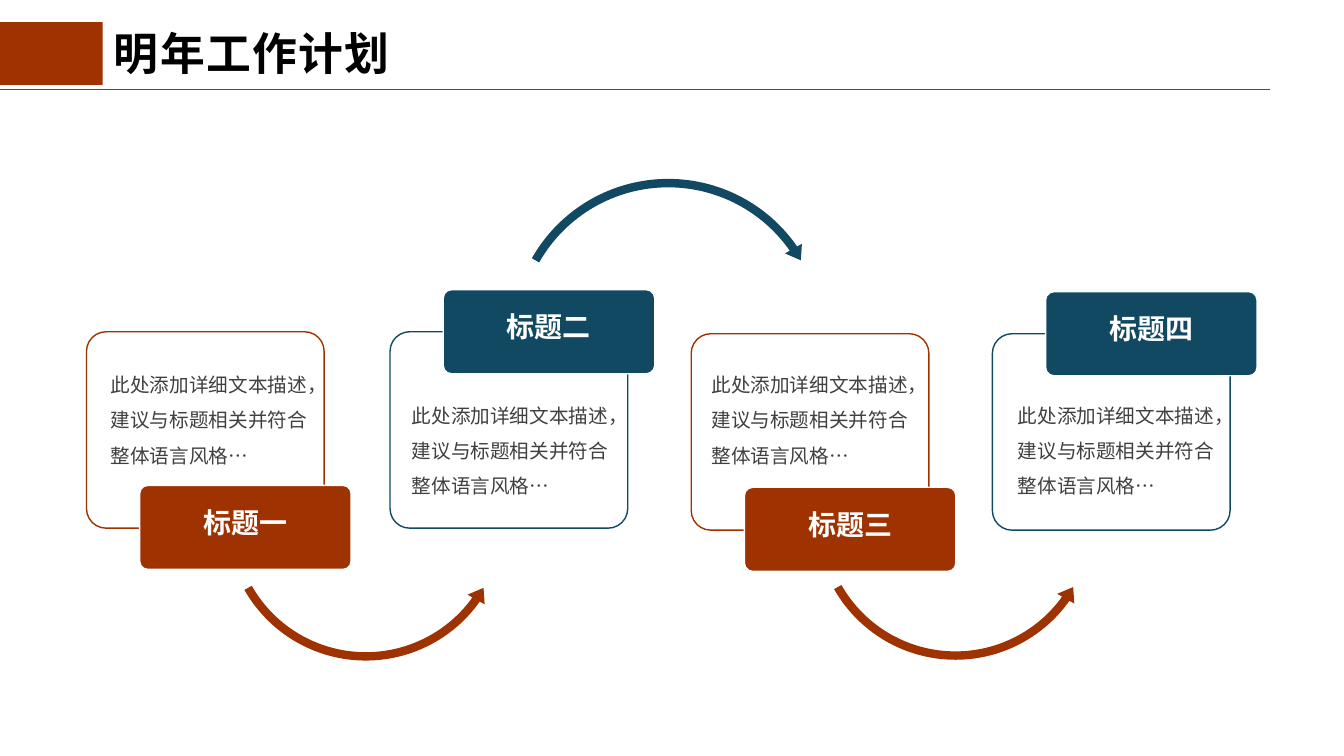
from dataclasses import dataclass

from lxml.etree import SubElement
from pptx import Presentation
from pptx.dml.color import RGBColor
from pptx.enum.lang import MSO_LANGUAGE_ID as Language
from pptx.enum.shapes import MSO_CONNECTOR as Connector
from pptx.enum.shapes import MSO_SHAPE as Shape
from pptx.enum.text import MSO_ANCHOR as Anchor
from pptx.enum.text import MSO_AUTO_SIZE as AutoSize
from pptx.enum.text import PP_ALIGN as Align
from pptx.oxml.ns import qn
from pptx.util import Cm, Pt

RUST, TEAL, WHITE, BLACK, GREY = "9F3201", "104961", "FFFFFF", "000000", "404040"
FONT = "Arial"
DETAIL = "此处添加详细文本描述，建议与标题相关并符合整体语言风格…"

CARD_SIZE = (5.99, 4.95)
PLATE_SIZE = (5.33, 2.12)
DETAIL_SIZE = (5.72, 2.84)
PLATE_SHIFT = 1.34
PLATE_ABOVE, PLATE_BELOW = -1.06, 3.87
DETAIL_HIGH, DETAIL_LOW = 8.97, 9.75


@dataclass
class Step:
    heading: str
    left: float
    top: float
    detail_left: float
    plate_on_top: bool

    @property
    def color(self) -> str:
        return TEAL if self.plate_on_top else RUST


@dataclass
class Arc:
    kind: Shape
    left: float
    top: float
    size: float
    color: str
    adjustments: tuple


UNDER_ARC = (0.029, 3.512, 21.267, 90.245, 0.034)
OVER_ARC = (0.026, 3.115, 195.129, 125.755, 0.03)

STEPS = [
    Step("标题一", 2.18, 8.36, 2.54, False),
    Step("标题二", 9.83, 8.36, 10.13, True),
    Step("标题三", 17.42, 8.41, 17.68, False),
    Step("标题四", 25.01, 8.41, 25.4, True),
]
ARCS = [
    Arc(Shape.LEFT_CIRCULAR_ARROW, 5.56, 9.47, 7.32, RUST, UNDER_ARC),
    Arc(Shape.CIRCULAR_ARROW, 12.75, 4.37, 8.18, TEAL, OVER_ARC),
    Arc(Shape.LEFT_CIRCULAR_ARROW, 20.42, 9.45, 7.32, RUST, UNDER_ARC),
]


def rgb(color: str) -> RGBColor:
    return RGBColor.from_string(color)


def write(box, text: str, *, size: float, color: str, bold: bool = False,
          align=Align.LEFT, anchor=Anchor.TOP, line_spacing: float = 1.0,
          tracking: float = 0, bottom: float = 0.13) -> None:
    frame = box.text_frame
    frame.word_wrap = True
    frame.auto_size = AutoSize.NONE
    frame.vertical_anchor = anchor
    frame.margin_left = frame.margin_right = Cm(0.25)
    frame.margin_top, frame.margin_bottom = Cm(0.13), Cm(bottom)
    para = frame.paragraphs[0]
    para.alignment = align
    para.line_spacing = line_spacing
    span = para.add_run()
    span.text = text
    span.font.name = FONT
    span.font.size = Pt(size)
    span.font.bold = bold
    span.font.color.rgb = rgb(color)
    span.font.language_id = Language.SIMPLIFIED_CHINESE
    if tracking:
        span.font._element.set("spc", str(round(tracking * 100)))


def add_block(page, kind, left: float, top: float, size: tuple, fill: str, line: str = ""):
    """Add a flat filled shape, outlined only when a line colour is given."""
    block = page.shapes.add_shape(kind, Cm(left), Cm(top), *map(Cm, size))
    block.shadow.inherit = False
    block.fill.solid()
    block.fill.fore_color.rgb = rgb(fill)
    if line:
        block.line.color.rgb = rgb(line)
        block.line.width = Pt(1)
    else:
        block.line.fill.background()
    return block


def draw_header(page) -> None:
    rule = page.shapes.add_connector(Connector.STRAIGHT, 0, Cm(2.26), Cm(32), Cm(2.26))
    rule.line.color.rgb = rgb(RUST)
    rule.line.width = Pt(0.5)
    SubElement(rule._element.spPr, qn("a:effectLst"))
    title = page.shapes.title
    title.left, title.top, title.width, title.height = map(Cm, (2.62, 0.56, 20.22, 1.45))
    write(title, "明年工作计划", size=32, color=BLACK, bold=True, anchor=Anchor.BOTTOM,
          line_spacing=0.9, tracking=1, bottom=0)
    add_block(page, Shape.RECTANGLE, 0, 0.56, (2.59, 1.58), RUST)


def draw_arc(page, arc: Arc) -> None:
    arrow = add_block(page, arc.kind, arc.left, arc.top, (arc.size, arc.size), arc.color)
    for index, value in enumerate(arc.adjustments):
        arrow.adjustments[index] = value


def draw_step(page, step: Step) -> None:
    card = add_block(page, Shape.ROUNDED_RECTANGLE, step.left, step.top, CARD_SIZE,
                     WHITE, step.color)
    plate_top = step.top + (PLATE_ABOVE if step.plate_on_top else PLATE_BELOW)
    plate = add_block(page, Shape.ROUNDED_RECTANGLE, step.left + PLATE_SHIFT, plate_top,
                      PLATE_SIZE, step.color, WHITE)
    card.adjustments[0] = plate.adjustments[0] = 0.1
    write(plate, step.heading, size=20, color=WHITE, bold=True, align=Align.CENTER,
          anchor=Anchor.MIDDLE, bottom=0.4)
    detail_top = DETAIL_LOW if step.plate_on_top else DETAIL_HIGH
    detail = page.shapes.add_textbox(Cm(step.detail_left), Cm(detail_top),
                                     *map(Cm, DETAIL_SIZE))
    write(detail, DETAIL, size=14, color=GREY, line_spacing=1.5)


def main() -> None:
    deck = Presentation()
    deck.slide_width, deck.slide_height = Cm(33.87), Cm(19.05)
    page = deck.slides.add_slide(deck.slide_layouts.get_by_name("Title Only"))
    draw_header(page)
    for arc in ARCS:
        draw_arc(page, arc)
    for step in STEPS:
        draw_step(page, step)
    deck.save("out.pptx")


if __name__ == "__main__":
    main()
